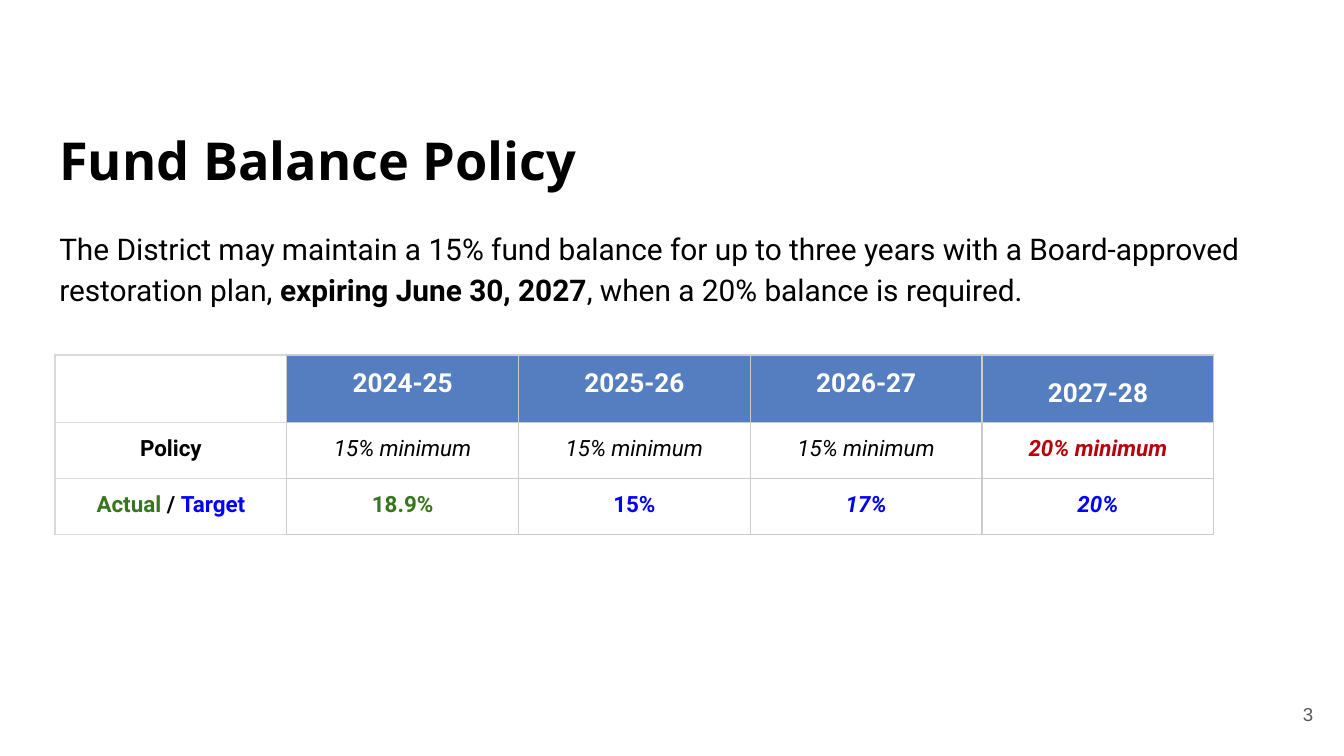
from dataclasses import dataclass

import pptx
import pptx.dml.color
import pptx.enum.text
import pptx.oxml
import pptx.oxml.ns
import pptx.util

Cm = pptx.util.Cm
Pt = pptx.util.Pt
Align = pptx.enum.text.PP_ALIGN
Anchor = pptx.enum.text.MSO_ANCHOR


@dataclass(frozen=True)
class Theme:
    heading_font: str = "Open Sans"
    text_font: str = "Roboto"
    number_font: str = "Arial"
    title_size: int = 28
    body_size: int = 16
    header_size: int = 14
    cell_size: int = 12
    number_size: int = 10
    ink: str = "000000"
    white: str = "FFFFFF"
    gray: str = "595959"
    header_fill: str = "557EC0"
    actual: str = "38761D"
    target: str = "0000FF"
    alert: str = "B8000C"
    border: str = "CCCCCC"
    label_border: str = "D9D9D9"
    border_width: float = 0.75


class SlideBuilder:
    def __init__(self, theme, slide):
        self.theme = theme
        self.slide = slide

    def style(self, font, name, size, color, bold=False, italic=False):
        font.name = name
        font.size = Pt(size)
        font.color.rgb = pptx.dml.color.RGBColor.from_string(color)
        font.bold = bold
        font.italic = italic

    def frame(self, shape, box, anchor=Anchor.TOP):
        shape.left, shape.top, shape.width, shape.height = map(Cm, box)
        text = shape.text_frame
        text.word_wrap = True
        text.auto_size = pptx.enum.text.MSO_AUTO_SIZE.NONE
        text.vertical_anchor = anchor
        text.margin_left = text.margin_right = Cm(0.25)
        text.margin_top = text.margin_bottom = Cm(0.25)
        return text.paragraphs[0]

    def title(self, wording, box):
        paragraph = self.frame(self.slide.shapes.title, box)
        paragraph.text = wording
        paragraph.alignment = Align.LEFT
        self.style(paragraph.font, self.theme.heading_font, self.theme.title_size,
                   self.theme.ink, bold=True)

    def body(self, phrases, box):
        paragraph = self.frame(self.slide.placeholders[1], box)
        properties = paragraph._p.get_or_add_pPr()
        properties.set("marL", "0")
        properties.set("indent", "0")
        properties.append(pptx.oxml.parse_xml(
            f'<a:buNone {pptx.oxml.ns.nsdecls("a")}/>'))
        paragraph.line_spacing = 1.15
        paragraph.space_before = Pt(0)
        paragraph.space_after = Pt(12)
        self.style(paragraph.font, self.theme.text_font, self.theme.body_size,
                   self.theme.ink)
        for wording, bold in phrases:
            run = paragraph.add_run()
            run.text = wording
            run.font.bold = bold

    def page_number(self, number, box):
        paragraph = self.frame(self.slide.shapes.add_textbox(0, 0, 0, 0), box,
                               Anchor.MIDDLE)
        paragraph.text = number
        paragraph.alignment = Align.RIGHT
        self.style(paragraph.font, self.theme.number_font, self.theme.number_size,
                   self.theme.gray)

    def cell(self, cell, phrases, size, border, fill=None, bold=True, italic=False,
             anchor=Anchor.TOP):
        cell.margin_left = cell.margin_right = Cm(0.25)
        cell.margin_top = cell.margin_bottom = Cm(0.25)
        cell.vertical_anchor = anchor
        properties = cell._tc.get_or_add_tcPr()
        for side in ("lnL", "lnR", "lnT", "lnB"):
            properties.append(pptx.oxml.parse_xml(
                f'<a:{side} {pptx.oxml.ns.nsdecls("a")} '
                f'w="{Pt(self.theme.border_width)}"><a:solidFill>'
                f'<a:srgbClr val="{border}"/></a:solidFill></a:{side}>'))
        if fill:
            cell.fill.solid()
            cell.fill.fore_color.rgb = pptx.dml.color.RGBColor.from_string(fill)
        else:
            cell.fill.background()
        paragraph = cell.text_frame.paragraphs[0]
        paragraph.alignment = Align.CENTER
        for wording, color in phrases:
            run = paragraph.add_run()
            run.text = wording
            if len(phrases) > 1:
                run.font.color.rgb = pptx.dml.color.RGBColor.from_string(color)
        if phrases:
            self.style(paragraph.font, self.theme.text_font, size, phrases[0][1],
                       bold, italic)

    def table(self, rows, left, top, column_width, row_heights):
        columns = len(rows[0])
        table = self.slide.shapes.add_table(
            len(rows), columns, Cm(left), Cm(top),
            Cm(column_width * columns), Cm(sum(row_heights))).table
        table.first_row = False
        table.horz_banding = False
        for column in table.columns:
            column.width = Cm(column_width)
        for r, row in enumerate(rows):
            table.rows[r].height = Cm(row_heights[r])
            for c, (phrases, options) in enumerate(row):
                header = r == 0 and c > 0
                self.cell(
                    table.cell(r, c), phrases,
                    self.theme.header_size if header else self.theme.cell_size,
                    self.theme.border if c else self.theme.label_border,
                    self.theme.header_fill if header else None, **options)


def main():
    theme = Theme()
    presentation = pptx.Presentation()
    presentation.slide_width = Cm(25.4)
    presentation.slide_height = Cm(14.29)
    slide = presentation.slides.add_slide(presentation.slide_layouts[1])
    builder = SlideBuilder(theme, slide)

    builder.title("Fund Balance Policy", (0.87, 2.18, 20.35, 1.6))
    builder.body([
        ("The District may maintain a 15% fund balance for up to three years "
         "with a Board-approved restoration plan, ", False),
        ("expiring June 30, 2027", True),
        (", when a 20% balance is required.", False),
    ], (0.87, 4.01, 23.67, 2.84))
    builder.page_number("3", (23.55, 12.95, 1.52, 1.09))

    italic = {"italic": True}
    minimum = ([("15% minimum", theme.ink)], {"bold": False, "italic": True})
    years = [([(year, theme.white)], {}) for year in ("2024-25", "2025-26", "2026-27")]
    last_year = ([("2027-28", theme.white)], {"anchor": Anchor.BOTTOM})
    policy = [([("Policy", theme.ink)], {}), *[minimum] * 3,
              ([("20% minimum", theme.alert)], italic)]
    balance = [
        ([("Actual", theme.actual), (" / ", theme.ink), ("Target", theme.target)], {}),
        ([("18.9%", theme.actual)], {}),
        ([("15%", theme.target)], {}),
        ([("17%", theme.target)], italic),
        ([("20%", theme.target)], italic),
    ]
    builder.table([[([], {}), *years, last_year], policy, balance],
                  1.04, 6.71, 4.38, (1.22, 1.06, 1.06))
    presentation.save("out.pptx")


if __name__ == "__main__":
    main()
